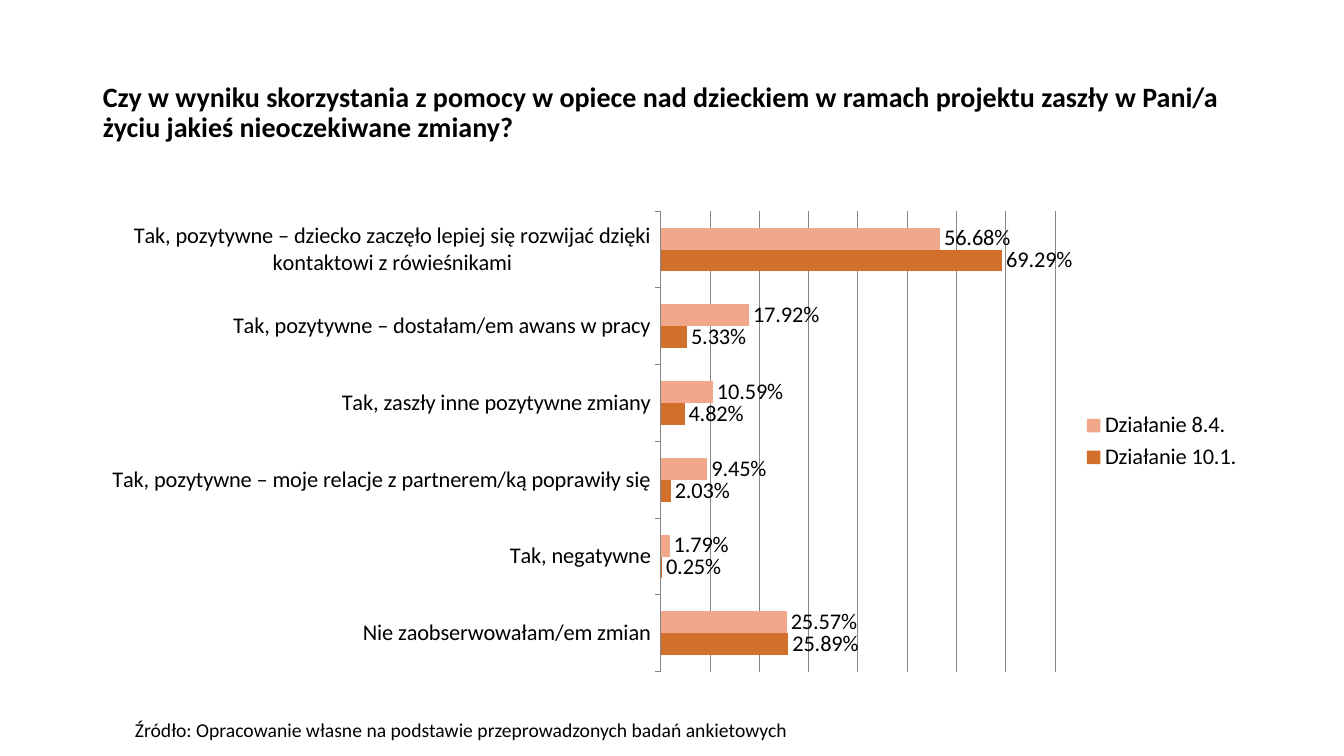
from lxml import etree
from pptx import Presentation
from pptx.chart.data import CategoryChartData
from pptx.dml.color import RGBColor
from pptx.enum.chart import XL_CHART_TYPE, XL_LABEL_POSITION, XL_LEGEND_POSITION, XL_TICK_LABEL_POSITION, XL_TICK_MARK
from pptx.enum.text import MSO_ANCHOR, MSO_AUTO_SIZE, PP_ALIGN
from pptx.oxml.ns import qn
from pptx.util import Inches, Pt

BARS = XL_CHART_TYPE.BAR_CLUSTERED
OUTER = XL_LABEL_POSITION.OUTSIDE_END
RIGHT = XL_LEGEND_POSITION.RIGHT
LOW = XL_TICK_LABEL_POSITION.LOW
TICK = XL_TICK_MARK.OUTSIDE
TOP = MSO_ANCHOR.TOP
MIDDLE = MSO_ANCHOR.MIDDLE
FIXED = MSO_AUTO_SIZE.NONE
LEFT = PP_ALIGN.LEFT

TITLE = "Czy w wyniku skorzystania z pomocy w opiece nad dzieckiem w ramach projektu zaszły w Pani/a życiu jakieś nieoczekiwane zmiany?"
SOURCE = "Źródło: Opracowanie własne na podstawie przeprowadzonych badań ankietowych"
ANSWERS = [
    ("Nie zaobserwowałam/em zmian", 0.2589, 0.2557),
    ("Tak, negatywne", 0.0025, 0.0179),
    ("Tak, pozytywne – moje relacje z partnerem/ką poprawiły się", 0.0203, 0.0945),
    ("Tak, zaszły inne pozytywne zmiany", 0.0482, 0.1059),
    ("Tak, pozytywne – dostałam/em awans w pracy", 0.0533, 0.1792),
    ("Tak, pozytywne – dziecko zaczęło lepiej się rozwijać dzięki kontaktowi z rówieśnikami", 0.6929, 0.5668),
]
SERIES = [("Działanie 10.1.", "D2702B"), ("Działanie 8.4.", "F1A78A")]


def color(code):
    return RGBColor.from_string(code)


class Deck:
    face = "Calibri"
    ink = "000000"
    grid = "868686"
    percent = "0.00%"

    def __init__(self, width, height):
        self.show = Presentation()
        self.show.slide_width = Inches(width)
        self.show.slide_height = Inches(height)
        self.slide = self.show.slides.add_slide(self.show.slide_layouts[5])

    def style(self, font, size, bold=False):
        font.name = self.face
        font.size = Pt(size)
        font.bold = bold
        font.color.rgb = color(self.ink)

    def text(self, shape, words, size, anchor, bold=False):
        frame = shape.text_frame
        frame.word_wrap = True
        frame.auto_size = FIXED
        frame.vertical_anchor = anchor
        para = frame.paragraphs[0]
        para.alignment = LEFT
        para.line_spacing = 0.9
        run = para.add_run()
        run.text = words
        self.style(run.font, size, bold)

    def title(self, box, words):
        shape = self.slide.shapes.title
        shape.left, shape.top, shape.width, shape.height = map(Inches, box)
        self.text(shape, words, 20, MIDDLE, True)

    def note(self, box, words):
        shape = self.slide.shapes.add_textbox(*map(Inches, box))
        self.text(shape, words, 14, TOP)

    def bars(self, box, rows, series, plot):
        names, *columns = zip(*rows)
        data = CategoryChartData(number_format=self.percent)
        data.categories = names
        for (name, _), column in zip(series, columns):
            data.add_series(name, column)
        chart = self.slide.shapes.add_chart(BARS, *map(Inches, box), data).chart
        self.style(chart.font, 16)
        chart.has_title = False
        chart.has_legend = True
        chart.legend.position = RIGHT
        chart.legend.include_in_layout = False
        self.axes(chart)
        bars = chart.plots[0]
        bars.gap_width = 150
        bars.overlap = 0
        bars.vary_by_categories = False
        for item, (_, code) in zip(bars.series, series):
            item.format.fill.solid()
            item.format.fill.fore_color.rgb = color(code)
            labels = item.data_labels
            labels.show_value = True
            labels.position = OUTER
            labels.number_format = self.percent
            labels.number_format_is_linked = False
            self.style(labels.font, 16)
        self.place(chart, plot)

    def axes(self, chart):
        names = chart.category_axis
        names.major_tick_mark = TICK
        names.tick_label_position = LOW
        values = chart.value_axis
        values.minimum_scale = 0
        values.maximum_scale = 0.8
        values.major_unit = 0.1
        values.has_major_gridlines = True
        values.visible = False
        for part in (names, values.major_gridlines):
            part.format.line.color.rgb = color(self.grid)
            part.format.line.width = Pt(0.75)

    def place(self, chart, plot):
        area = chart.element.find(".//" + qn("c:plotArea"))
        old = area.find(qn("c:layout"))
        if old is not None:
            area.remove(old)
        layout = etree.Element(qn("c:layout"))
        area.insert(0, layout)
        manual = etree.SubElement(layout, qn("c:manualLayout"))
        pairs = [("layoutTarget", "inner"), ("xMode", "edge"), ("yMode", "edge")]
        for tag, value in pairs + list(zip("xywh", plot)):
            etree.SubElement(manual, qn("c:" + tag)).set("val", str(value))


def main():
    deck = Deck(13.33, 7.5)
    deck.title((0.92, 0.4, 11.5, 1.45), TITLE)
    deck.bars((0.92, 2, 11.5, 4.76), ANSWERS, SERIES, (0.49, 0.02, 0.34, 0.96))
    deck.note((1.24, 7.1, 11.5, 0.57), SOURCE)
    deck.show.save("out.pptx")


if __name__ == "__main__":
    main()
